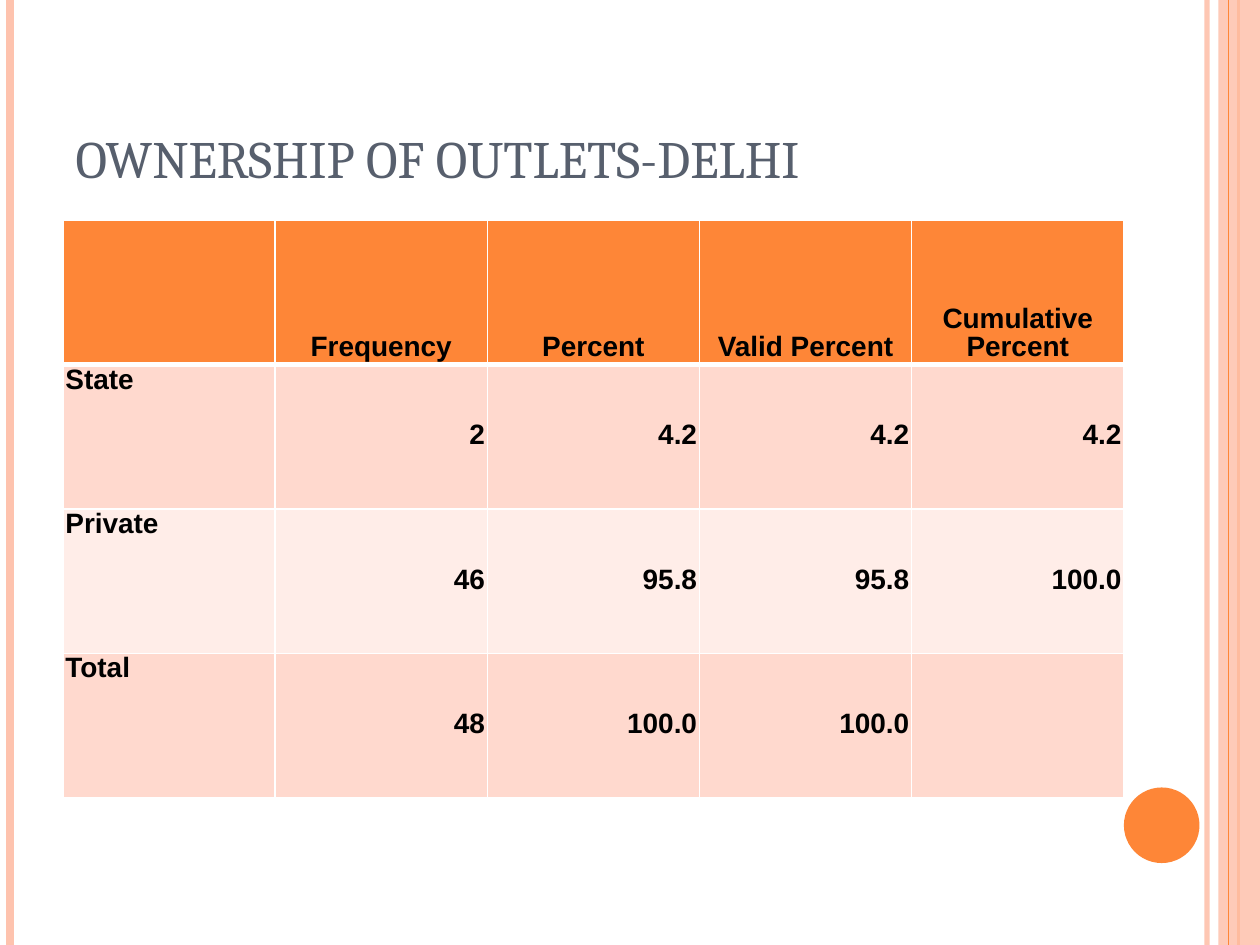
from lxml.etree import SubElement
from pptx import Presentation
from pptx.dml.color import RGBColor
from pptx.enum.shapes import MSO_CONNECTOR as Connector, MSO_SHAPE as Shape
from pptx.enum.text import MSO_ANCHOR as Anchor, PP_ALIGN as Align
from pptx.oxml.ns import qn
from pptx.util import Inches, Pt

ORANGE, PINK, WHITE = "FE8637", "FEC3AE", "FFFFFF"
BAND_COLORS = ["FFD9CE", "FFEDE8"]
ROWS = [
    ["", "Frequency", "Percent", "Valid Percent", "Cumulative Percent"],
    ["State", "2", "4.2", "4.2", "4.2"],
    ["Private", "46", "95.8", "95.8", "100.0"],
    ["Total", "48", "100.0", "100.0", ""],
]


def set_color(color_format, value):
    color_format.rgb = RGBColor.from_string(value)


def set_fill(fill, value):
    fill.solid()
    set_color(fill.fore_color, value)


def set_alpha(element, percent):
    color = next(element.iter(qn("a:srgbClr")))
    SubElement(color, qn("a:alpha"), val=str(percent * 1000))


def add_stripe(slide, x, height, color, weight, opacity=100):
    line = slide.shapes.add_connector(
        Connector.STRAIGHT, Inches(x), 0, Inches(x), Inches(height))
    set_color(line.line.color, color)
    line.line.width = Pt(weight)
    if opacity < 100:
        set_alpha(line._element.spPr, opacity)
    SubElement(line._element.spPr, qn("a:effectLst"))


def add_solid(slide, kind, left, top, width, height, color):
    shape = slide.shapes.add_shape(
        kind, Inches(left), Inches(top), Inches(width), Inches(height))
    set_fill(shape.fill, color)
    shape.line.fill.background()
    shape.shadow.inherit = False
    return shape


def add_decoration(slide, width, height):
    add_stripe(slide, width - 0.42, height, PINK, 3, 93)
    add_stripe(slide, 0.08, height, PINK, 4.5)
    add_stripe(slide, width - 0.17, height, ORANGE, 1.5)
    band = add_solid(slide, Shape.RECTANGLE, width - 0.33, 0, 0.33, height, PINK)
    set_alpha(band._element.spPr, 87)
    add_stripe(slide, width - 0.25, height, ORANGE, 0.75)
    add_solid(slide, Shape.OVAL, width - 1.08, height - 1.25, 0.6, 0.6, ORANGE)


def add_title(slide, left, top, width, height):
    title = slide.shapes.title
    title.left, title.top = Inches(left), Inches(top)
    title.width, title.height = Inches(width), Inches(height)
    title.text_frame.text = "OWNERSHIP OF OUTLETS-DELHI"
    title.text_frame.vertical_anchor = Anchor.BOTTOM
    paragraph = title.text_frame.paragraphs[0]
    paragraph.alignment = Align.LEFT
    font = paragraph.runs[0].font
    font.name, font.size = "Cambria", Pt(30)
    set_color(font.color, "575F6D")


def set_borders(cell, top, bottom):
    properties = cell._tc.get_or_add_tcPr()
    for side, weight in (("L", 1), ("R", 1), ("T", top), ("B", bottom)):
        line = SubElement(properties, qn(f"a:ln{side}"), w=str(Pt(weight)))
        SubElement(SubElement(line, qn("a:solidFill")), qn("a:srgbClr"), val=WHITE)


def format_cell(cell, row, column, text):
    set_borders(cell, 3 if row == 1 else 1, 3 if row == 0 else 1)
    set_fill(cell.fill, BAND_COLORS[(row - 1) % 2] if row else ORANGE)
    cell.margin_left = cell.margin_right = Inches(0.02)
    cell.margin_top = cell.margin_bottom = Inches(0.02)
    if row == 0:
        cell.vertical_anchor, alignment = Anchor.BOTTOM, Align.CENTER
    elif column == 0:
        cell.vertical_anchor, alignment = Anchor.TOP, Align.LEFT
    else:
        cell.vertical_anchor, alignment = Anchor.MIDDLE, Align.RIGHT
    cell.text_frame.text = text
    paragraph = cell.text_frame.paragraphs[0]
    paragraph.alignment = alignment
    paragraph.line_spacing = Pt(16)
    for run in paragraph.runs:
        run.font.name, run.font.size, run.font.bold = "Arial", Pt(16), True
        set_color(run.font.color, "000000")


def add_ownership_table(slide, left, top, width, height):
    table = slide.shapes.add_table(
        len(ROWS), len(ROWS[0]),
        Inches(left), Inches(top), Inches(width), Inches(height)).table
    for row, texts in enumerate(ROWS):
        for column, text in enumerate(texts):
            format_cell(table.cell(row, column), row, column, text)


def main():
    presentation = Presentation()
    presentation.slide_width, presentation.slide_height = Inches(10), Inches(7.5)
    slide = presentation.slides.add_slide(presentation.slide_layouts[5])
    set_fill(slide.background.fill, WHITE)
    add_decoration(slide, 10, 7.5)
    add_title(slide, 0.5, 0.3, 8.17, 1.25)
    add_ownership_table(slide, 0.5, 1.75, 8.42, 4.58)
    presentation.save("out.pptx")


if __name__ == "__main__":
    main()
